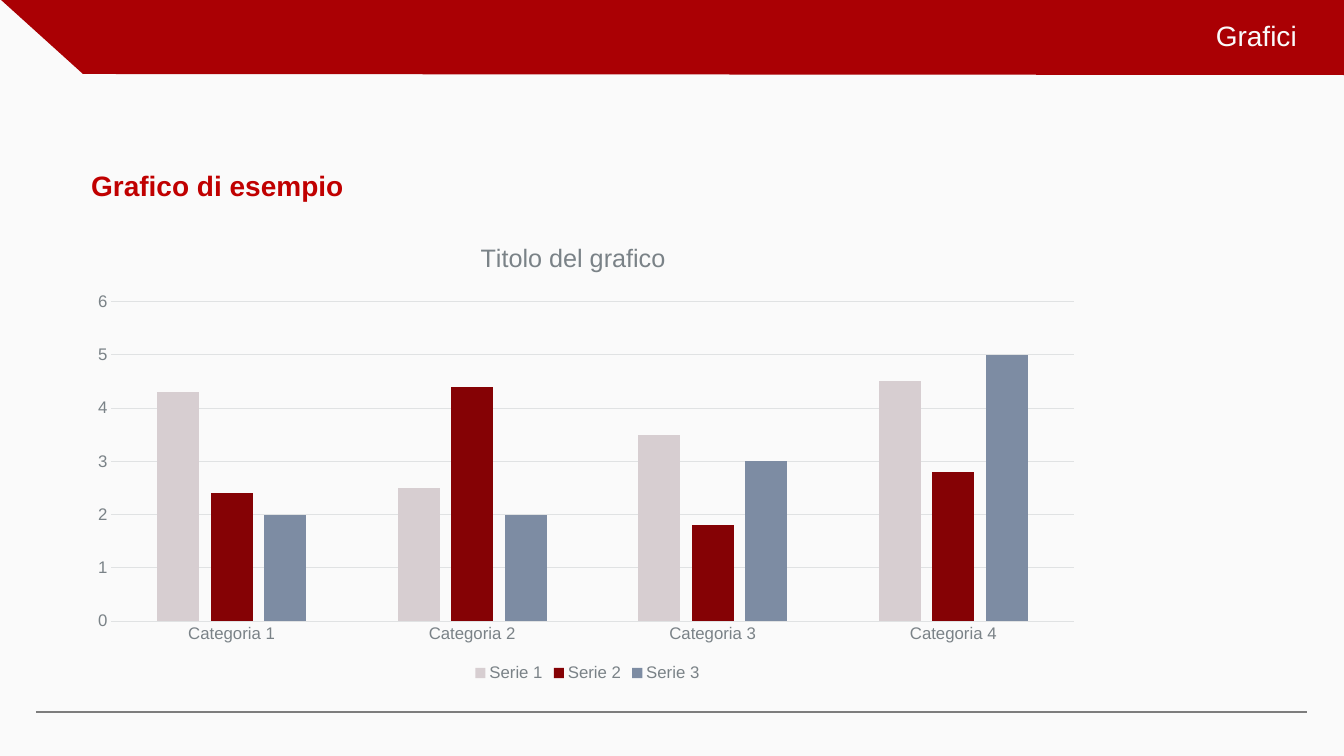
import pptx
import pptx.chart.data
import pptx.dml.color
import pptx.enum.chart
import pptx.enum.shapes
import pptx.enum.text
import pptx.oxml
import pptx.oxml.ns
import pptx.util

PX = 914400 / 100.8
FONT = "Arial"
GREY = "7A8287"
GRID = "E0E2E3"


def style(font, size, color, bold=False):
    font.name = FONT
    font.size = pptx.util.Pt(size)
    font.bold = bold
    font.color.rgb = pptx.dml.color.RGBColor.from_string(color)


def set_chart_layout(parent, index, fractions, target=""):
    """Fix a chart part at fractions of the chart area: x, y and optionally w, h."""
    for old in parent.findall(pptx.oxml.ns.qn("c:layout")):
        parent.remove(old)
    modes = '<c:xMode val="edge"/><c:yMode val="edge"/>'
    values = "".join(f'<c:{k} val="{v}"/>' for k, v in zip("xywh", fractions))
    parent.insert(index, pptx.oxml.parse_xml(
        f'<c:layout {pptx.oxml.ns.nsdecls("c")}><c:manualLayout>'
        f"{target}{modes}{values}</c:manualLayout></c:layout>"))


prs = pptx.Presentation()
prs.slide_width = round(1344 * PX)
prs.slide_height = round(756 * PX)
slide = prs.slides.add_slide(prs.slide_layouts[0])
slide.background.fill.solid()
slide.background.fill.fore_color.rgb = pptx.dml.color.RGBColor.from_string("FAFAFA")

# Banner and footer rule
outline = slide.shapes.build_freeform(0, -1, scale=PX)
outline.add_line_segments([(1349, -1), (1349, 75), (83, 74)], close=True)
banner = outline.convert_to_shape()
banner.shadow.inherit = False
banner.fill.solid()
banner.fill.fore_color.rgb = pptx.dml.color.RGBColor.from_string("AA0004")
banner.line.fill.background()

footer_rule = slide.shapes.add_connector(
    pptx.enum.shapes.MSO_CONNECTOR.STRAIGHT,
    *[round(v * PX) for v in (36, 712, 1307, 712)])
footer_rule.line.color.rgb = pptx.dml.color.RGBColor.from_string("7D7D7D")
footer_rule.line.width = pptx.util.Pt(0.75)
footer_rule.element.spPr.append(
    pptx.oxml.parse_xml(f'<a:effectLst {pptx.oxml.ns.nsdecls("a")}/>'))

# Headings, brought in front of the banner
ALIGN = pptx.enum.text.PP_ALIGN
ANCHOR = pptx.enum.text.MSO_ANCHOR
headings = [
    (slide.shapes.title, "Grafici", (516, 0, 791, 74), ALIGN.RIGHT, ANCHOR.MIDDLE, 0.9, "FAFAFA", False),
    (slide.placeholders[1], "Grafico di esempio", (81, 157, 1182, 92), ALIGN.LEFT, ANCHOR.TOP, 1.2, "C00000", True),
]
for heading, text, box, align, anchor, spacing, color, bold in headings:
    heading.left, heading.top, heading.width, heading.height = [round(v * PX) for v in box]
    heading.text_frame.text = text
    heading.text_frame.vertical_anchor = anchor
    paragraph = heading.text_frame.paragraphs[0]
    paragraph.alignment = align
    paragraph.line_spacing = spacing
    paragraph.space_before = pptx.util.Pt(0)
    style(paragraph.font, 20, color, bold)
    slide.shapes.element.append(heading.element)

# Chart
SERIES = {
    "Serie 1": ((4.3, 2.5, 3.5, 4.5), "D7CED1"),
    "Serie 2": ((2.4, 4.4, 1.8, 2.8), "850205"),
    "Serie 3": ((2, 2, 3, 5), "7D8CA3"),
}
data = pptx.chart.data.CategoryChartData()
data.categories = [f"Categoria {n}" for n in range(1, 5)]
for name, (values, color) in SERIES.items():
    data.add_series(name, values)
chart = slide.shapes.add_chart(
    pptx.enum.chart.XL_CHART_TYPE.COLUMN_CLUSTERED,
    *[round(v * PX) for v in (81, 223, 1013, 463)], data).chart
style(chart.font, 10, "393D3F")

chart.has_title = True
chart_title = chart.chart_title
chart_title.text_frame.text = "Titolo del grafico"
style(chart_title.text_frame.paragraphs[0].font, 18, GREY)
set_chart_layout(chart_title.element, 1, (0.39, 0.03))

chart.has_legend = True
chart.legend.position = pptx.enum.chart.XL_LEGEND_POSITION.BOTTOM
chart.legend.include_in_layout = False
style(chart.legend.font, 12, GREY)

columns = chart.plots[0]
columns.vary_by_categories = False
columns.gap_width = 219
columns.overlap = -27
for series, (values, color) in zip(columns.series, SERIES.values()):
    series.format.fill.solid()
    series.format.fill.fore_color.rgb = pptx.dml.color.RGBColor.from_string(color)
set_chart_layout(chart.element.chart.plotArea, 0, (0.03, 0.17, 0.95, 0.69),
                 '<c:layoutTarget val="inner"/>')

for axis in (chart.category_axis, chart.value_axis):
    axis.major_tick_mark = pptx.enum.chart.XL_TICK_MARK.NONE
    axis.minor_tick_mark = pptx.enum.chart.XL_TICK_MARK.NONE
    style(axis.tick_labels.font, 12, GREY)
chart.value_axis.minimum_scale = 0
chart.value_axis.maximum_scale = 6
chart.value_axis.major_unit = 1
chart.value_axis.format.line.fill.background()
for rule in (chart.category_axis.format.line, chart.value_axis.major_gridlines.format.line):
    rule.color.rgb = pptx.dml.color.RGBColor.from_string(GRID)
    rule.width = pptx.util.Pt(0.75)

prs.save("out.pptx")
